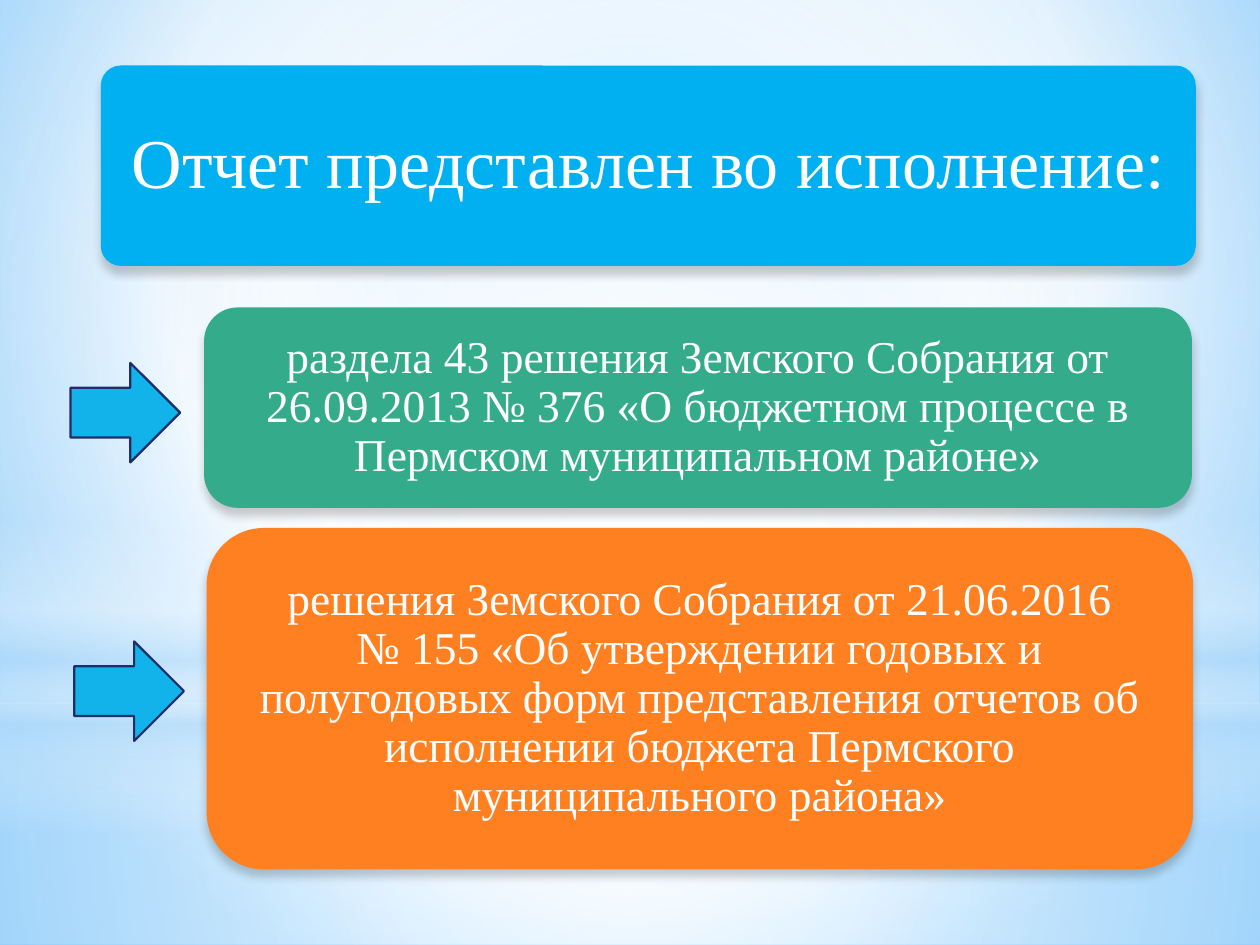
from lxml import etree
from pptx import Presentation
from pptx.dml.color import RGBColor
from pptx.enum.shapes import MSO_SHAPE as Shape
from pptx.enum.text import MSO_ANCHOR as Anchor, PP_ALIGN as Align
from pptx.oxml.ns import qn
from pptx.util import Inches, Pt

COLORS = {
    "white": "FFFFFF", "black": "000000", "pale": "B4DCFA",
    "sky": "9ED5FF", "deep_sky": "5BB9FF",
    "title": "00B0F0", "green": "34AC8B", "orange": "FF8021",
    "arrow": "12B2EB", "arrow_line": "1F2E69",
}
FONT = "Times New Roman"
CENTER = (50, 50, 50, 50)

# kind, box, stops (position, colour, opacity), focus of a radial gradient
GLOWS = [
    (Shape.RECTANGLE, (0, 5.58, 10, 1.92),
     [(0, "white", 91), (37, "white", 76), (100, "pale", 79)], CENTER),
    (Shape.RECTANGLE, (0, 0, 10, 5.58),
     [(0, "white", 89), (48, "white", 62), (100, "pale", 79)], CENTER),
    (Shape.RECTANGLE, (0, 4.12, 10, 2.5),
     [(0, "white", 0), (29, "white", 30), (45, "pale", 40),
      (55, "white", 26), (65, "pale", 60), (100, "white", 0)], None),
    (Shape.OVAL, (0, 1.75, 10, 5.58),
     [(0, "white", 100), (56, "white", 0)], CENTER),
]

# box, corner, colour, text size, horizontal and vertical inset, text
CARDS = [
    ((0.8, 0.52, 8.69, 1.59), 0.1, "title", 40, (0.08, 0.06),
     "Отчет представлен во исполнение:"),
    ((1.62, 2.44, 7.84, 1.59), 0.167, "green", 26, (0.2, 0.2),
     "раздела 43 решения Земского Собрания от 26.09.2013 № 376 "
     "«О бюджетном процессе в Пермском муниципальном районе»"),
    ((1.64, 4.19, 7.83, 2.71), 0.167, "orange", 26, (0.2, 0.2),
     "решения Земского Собрания от 21.06.2016\v№ 155 «Об утверждении "
     "годовых и полугодовых форм представления отчетов об исполнении "
     "бюджета Пермского муниципального района»"),
]
ARROWS = [(0.56, 2.88), (0.59, 5.09)]


def rgb(name):
    return RGBColor.from_string(COLORS[name])


def add_xml(parent, tag, **attributes):
    values = {key: str(value) for key, value in attributes.items()}
    return etree.SubElement(parent, qn(tag), values)


def add_color(parent, name, opacity):
    color = add_xml(parent, "a:srgbClr", val=COLORS[name])
    if opacity < 100:
        add_xml(color, "a:alpha", val=opacity * 1000)


def set_gradient(fill, owner, stops, focus):
    """Give owner a gradient: radial around focus, or top to bottom without one."""
    fill.gradient()
    gradient = next(owner.iter(qn("a:gradFill")))
    for child in list(gradient):
        gradient.remove(child)
    stop_list = add_xml(gradient, "a:gsLst")
    for position, name, opacity in stops:
        add_color(add_xml(stop_list, "a:gs", pos=position * 1000), name, opacity)
    if focus:
        radial = add_xml(gradient, "a:path", path="circle")
        edges = {side: value * 1000 for side, value in zip("ltrb", focus)}
        add_xml(radial, "a:fillToRect", **edges)
    else:
        add_xml(gradient, "a:lin", ang=90 * 60000, scaled=0)


def add_shape(slide, kind, box):
    shape = slide.shapes.add_shape(kind, *map(Inches, box))
    shape.shadow.inherit = False
    shape.line.fill.background()
    return shape


def fill_solid(shape, name):
    shape.fill.solid()
    shape.fill.fore_color.rgb = rgb(name)


def add_glow(slide, kind, box, stops, focus):
    shape = add_shape(slide, kind, box)
    set_gradient(shape.fill, shape._element.spPr, stops, focus)


def add_drop_shadow(shape):
    effects = shape._element.spPr.find(qn("a:effectLst"))
    shadow = add_xml(effects, "a:outerShdw", blurRad=Pt(5), dist=Pt(4),
                     dir=90 * 60000, rotWithShape=0)
    add_color(shadow, "black", 20)


def add_card(slide, box, corner, color, size, insets, text):
    card = add_shape(slide, Shape.ROUNDED_RECTANGLE, box)
    card.adjustments[0] = corner
    fill_solid(card, color)
    add_drop_shadow(card)
    frame = card.text_frame
    across, down = map(Inches, insets)
    frame_format = {
        "word_wrap": True, "vertical_anchor": Anchor.MIDDLE,
        "margin_left": across, "margin_right": across,
        "margin_top": down, "margin_bottom": down,
    }
    for name, value in frame_format.items():
        setattr(frame, name, value)
    paragraph = frame.paragraphs[0]
    paragraph.text = text
    paragraph.alignment = Align.CENTER
    paragraph.line_spacing = 0.9
    for run in paragraph.runs:
        for name, value in {"name": FONT, "size": Pt(size)}.items():
            setattr(run.font, name, value)
        run.font.color.rgb = rgb("white")


def add_arrow(slide, left, top):
    arrow = add_shape(slide, Shape.RIGHT_ARROW, (left, top, 0.87, 0.79))
    fill_solid(arrow, "arrow")
    arrow.line.color.rgb = rgb("arrow_line")
    arrow.line.width = Pt(1.25)


def main():
    presentation = Presentation()
    presentation.slide_width = Inches(10)
    presentation.slide_height = Inches(7.5)
    slide = presentation.slides.add_slide(presentation.slide_layouts[6])
    set_gradient(slide.background.fill, slide._element,
                 [(0, "sky", 100), (60, "white", 100), (100, "deep_sky", 100)],
                 (20, 10, 20, 60))
    for glow in GLOWS:
        add_glow(slide, *glow)
    for card in CARDS:
        add_card(slide, *card)
    for position in ARROWS:
        add_arrow(slide, *position)
    presentation.save("out.pptx")


if __name__ == "__main__":
    main()
